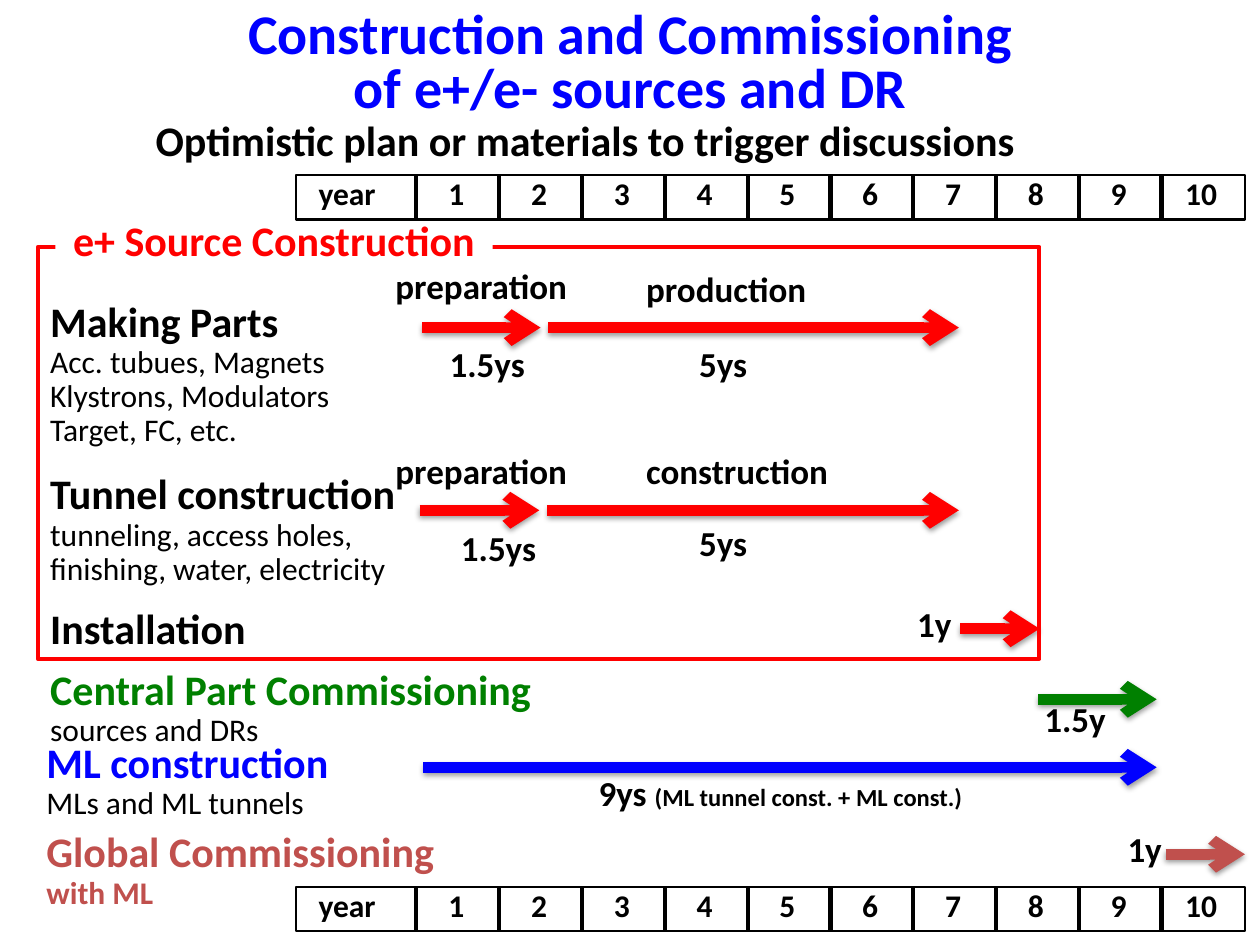
from dataclasses import dataclass
from typing import Optional

from lxml import etree
from pptx import Presentation
from pptx.dml.color import RGBColor
from pptx.enum.shapes import MSO_CONNECTOR, MSO_SHAPE
from pptx.enum.text import MSO_ANCHOR, MSO_AUTO_SIZE, PP_ALIGN
from pptx.oxml import parse_xml
from pptx.oxml.ns import nsdecls, qn
from pptx.util import Inches, Pt

FONT = "Calibri"
BLACK, WHITE = "000000", "FFFFFF"
RED, GREEN, BLUE, BRICK = "FF0000", "008000", "0000FF", "C0504D"


@dataclass
class Run:
    text: str
    size: float = 20
    color: str = BLACK
    bold: bool = True


@dataclass
class Block:
    """A text box; each item of paragraphs is a list of runs."""
    left: float
    top: float
    width: float
    height: float
    paragraphs: list[list[Run]]
    spacing: Optional[float] = None
    center: bool = False
    wrap: bool = False
    fill: Optional[str] = None


@dataclass
class Arrow:
    start: float
    end: float
    y: float
    color: str = RED


def rgb(value: str) -> RGBColor:
    return RGBColor.from_string(value)


def add_block(shapes, b: Block):
    box = [Inches(v) for v in (b.left, b.top, b.width, b.height)]
    if b.fill:
        sp = shapes.add_shape(MSO_SHAPE.RECTANGLE, *box)
        sp.shadow.inherit = False
        sp.fill.solid()
        sp.fill.fore_color.rgb = rgb(b.fill)
        sp.line.fill.background()
    else:
        sp = shapes.add_textbox(*box)
    tf = sp.text_frame
    tf.word_wrap = b.wrap
    tf.auto_size = MSO_AUTO_SIZE.SHAPE_TO_FIT_TEXT
    tf.vertical_anchor = MSO_ANCHOR.TOP
    for i, runs in enumerate(b.paragraphs):
        p = tf.add_paragraph() if i else tf.paragraphs[0]
        p.alignment = PP_ALIGN.CENTER if b.center else PP_ALIGN.LEFT
        if b.spacing:
            p.line_spacing = b.spacing
        for item in runs:
            r = p.add_run()
            r.text = item.text
            r.font.name = FONT
            r.font.size = Pt(item.size)
            r.font.bold = item.bold
            r.font.color.rgb = rgb(item.color)
    return sp


def add_frame(shapes, left: float, top: float, width: float, height: float,
              color: str, weight: float) -> None:
    sp = shapes.add_shape(MSO_SHAPE.RECTANGLE, Inches(left), Inches(top),
                          Inches(width), Inches(height))
    sp.shadow.inherit = False
    sp.fill.background()
    sp.line.color.rgb = rgb(color)
    sp.line.width = Pt(weight)


def add_arrow(shapes, a: Arrow) -> None:
    cxn = shapes.add_connector(MSO_CONNECTOR.STRAIGHT, Inches(a.start), Inches(a.y),
                               Inches(a.end), Inches(a.y))
    cxn.line.color.rgb = rgb(a.color)
    cxn.line.width = Pt(6)
    etree.SubElement(cxn.line._get_or_add_ln(), qn("a:tailEnd"), type="arrow")
    cxn._element.spPr.append(parse_xml(
        f'<a:effectLst {nsdecls("a")}>'
        '<a:outerShdw blurRad="40000" dist="20000" dir="5400000" rotWithShape="0">'
        '<a:srgbClr val="000000"><a:alpha val="38000"/></a:srgbClr>'
        '</a:outerShdw></a:effectLst>'))


def add_year_scale(shapes, top: float) -> None:
    """Group of a 'year' cell and ten numbered cells."""
    first, step, cell_w, cell_h = 3.3, 0.657, 0.67, 0.35
    group = shapes.add_group_shape().shapes
    add_frame(group, 2.35, top, 0.96, cell_h, BLACK, 1.5)
    for i in range(10):
        add_frame(group, first + i * step, top, cell_w, cell_h, BLACK, 1.5)
    add_block(group, Block(2.43, top - 0.06, 0.66, 0.4, [[Run("year", 18)]]))
    for i in range(10):
        width = 0.33 if i < 9 else 0.46
        left = first + i * step + (cell_w - width) / 2 - 0.01
        add_block(group, Block(left, top - 0.06, width, 0.4, [[Run(str(i + 1), 18)]]))


def task(left: float, top: float, width: float, height: float, title: str,
         *details: str, color: str = BLACK, detail: Optional[Run] = None,
         fill: Optional[str] = None, wrap: bool = False) -> Block:
    """Task heading with its smaller detail lines."""
    lines = [[Run(title, 24, color)]] + [[Run(d, 18, bold=False)] for d in details]
    if detail:
        lines.append([detail])
    return Block(left, top, width, height, lines, 0.9 if len(lines) > 1 else None,
                 wrap=wrap, fill=fill)


def label(left: float, top: float, width: float, text: str) -> Block:
    return Block(left, top, width, 0.44, [[Run(text)]])


TITLE = Block(0.99, 0.04, 8.03, 0.98,
              [[Run("Construction and Commissioning", 32, BLUE)],
               [Run("of e+/e- sources and DR", 32, BLUE)]], 0.8, center=True, wrap=True)

TASKS = [
    task(0.3, 5.26, 4.07, 0.74, "Central Part Commissioning", "sources and DRs", color=GREEN),
    task(0.27, 5.84, 2.48, 0.74, "ML construction", "MLs and ML tunnels",
         color=BLUE, wrap=True),
    task(0.3, 2.34, 2.46, 1.29, "Making Parts", "Acc. tubues, Magnets",
         "Klystrons, Modulators", "Target, FC, etc."),
    task(0.3, 4.73, 1.78, 0.5, "Installation"),
    task(0.3, 3.71, 2.99, 1.01, "Tunnel construction", "tunneling, access holes,",
         "finishing, water, electricity"),
    task(0.27, 6.55, 3.5, 0.74, "Global Commissioning", color=BRICK,
         detail=Run("with ML", 18, BRICK), fill=WHITE, wrap=True),
]

ARROWS = [
    Arrow(3.35, 4.29, 2.6), Arrow(4.35, 7.61, 2.6),
    Arrow(3.33, 4.28, 4.05), Arrow(4.34, 7.61, 4.05),
    Arrow(7.62, 8.25, 4.99),
    Arrow(8.24, 9.18, 5.55, GREEN),
    Arrow(3.36, 9.18, 6.09, BLUE),
    Arrow(9.25, 9.88, 6.78, BRICK),
]

LABELS = [
    label(3.04, 2.05, 1.59, "preparation"), label(5.03, 2.07, 1.49, "production"),
    label(3.47, 2.67, 0.81, "1.5ys"), label(5.45, 2.67, 0.59, "5ys"),
    label(3.04, 3.52, 1.59, "preparation"), label(5.03, 3.52, 1.66, "construction"),
    label(3.56, 4.13, 0.81, "1.5ys"), label(5.45, 4.09, 0.59, "5ys"),
    label(7.18, 4.73, 0.48, "1y"), label(8.19, 5.49, 0.69, "1.5y"),
    label(8.85, 6.52, 0.48, "1y"),
    Block(4.39, 6.07, 3.61, 0.44,
          [[Run("9ys "), Run("(ML tunnel const. + ML const.)", 14)]], center=True, wrap=True),
    Block(0.63, 0.94, 8.03, 0.44,
          [[Run("Optimistic plan or materials to trigger discussions", 24)]],
          0.8, center=True, wrap=True),
]


def main() -> None:
    prs = Presentation()
    prs.slide_width, prs.slide_height = Inches(10), Inches(7.5)
    shapes = prs.slides.add_slide(prs.slide_layouts[6]).shapes

    title = add_block(shapes, TITLE)
    # A hanging indent moves the second title line slightly to the left
    title.text_frame.paragraphs[1]._p.get_or_add_pPr().set("indent", str(Inches(-0.2)))
    for block in TASKS:
        add_block(shapes, block)
    for arrow in ARROWS:
        add_arrow(shapes, arrow)
    for block in LABELS:
        add_block(shapes, block)
    add_frame(shapes, 0.3, 1.96, 7.95, 3.27, RED, 2.25)
    add_block(shapes, Block(0.44, 1.7, 3.47, 0.48, [[Run("e+ Source Construction", 24, RED)]],
                            0.9, center=True, wrap=True, fill=WHITE))
    for top in (7.04, 1.39):
        add_year_scale(shapes, top)
    prs.save("out.pptx")


if __name__ == "__main__":
    main()
